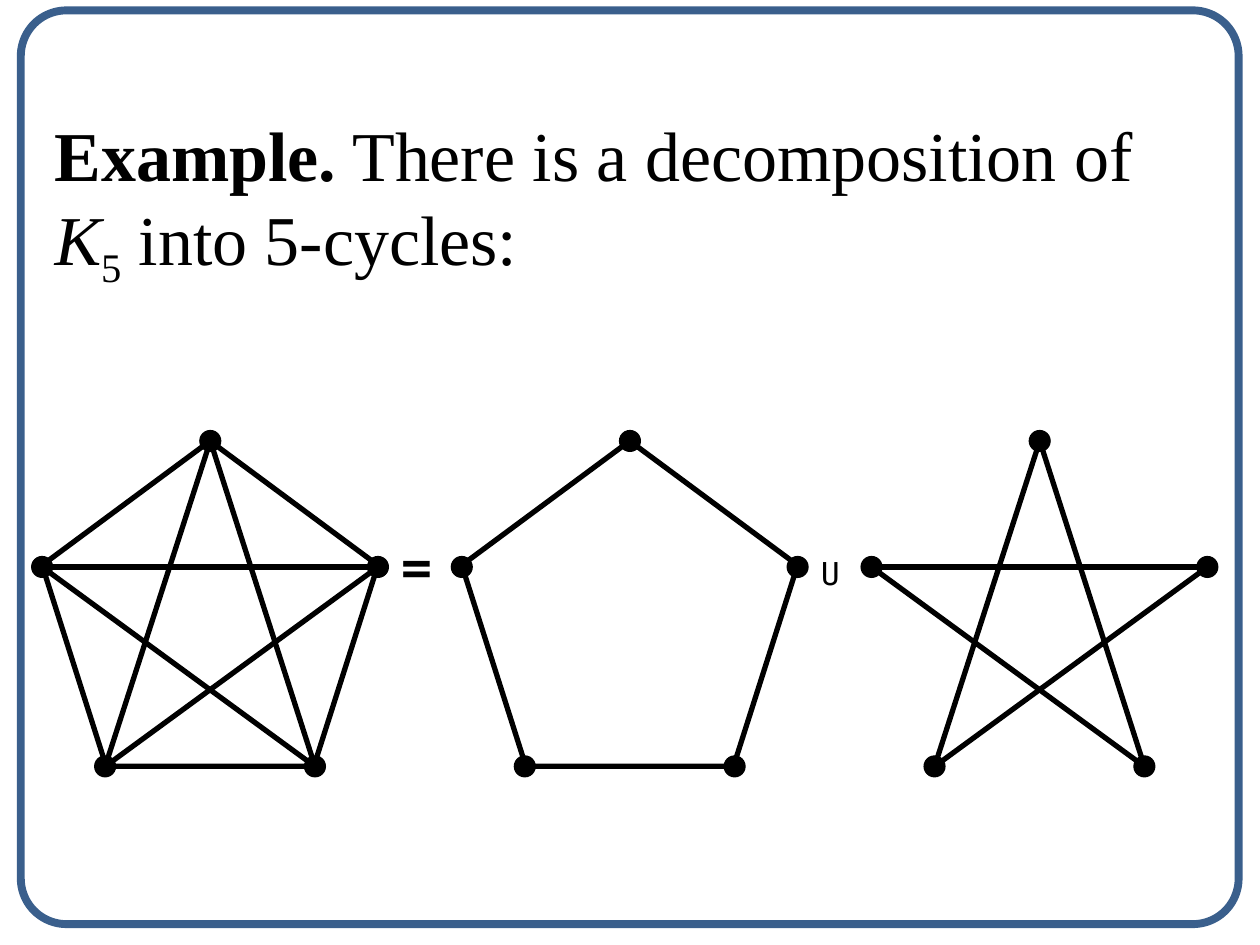
from dataclasses import dataclass

from lxml.etree import SubElement
from pptx import Presentation
from pptx.dml.color import RGBColor
from pptx.enum.shapes import MSO_CONNECTOR, MSO_SHAPE
from pptx.enum.text import MSO_AUTO_SIZE
from pptx.oxml.ns import qn
from pptx.util import Cm, Pt


@dataclass(frozen=True)
class Theme:
    ink: RGBColor = RGBColor(0x00, 0x00, 0x00)
    frame: RGBColor = RGBColor(0x3A, 0x5F, 0x8C)
    serif: str = "Times New Roman"
    sans: str = "Calibri"
    mono: str = "DejaVu Sans Mono"
    statement_size: int = 40
    equals_size: int = 36
    union_size: int = 18
    edge_width: float = 3
    node_line_width: float = 0.75
    frame_width: float = 4.5


THEME = Theme()

# Text, bold, italic, subscript
STATEMENT = [
    ("Example.", True, False, False),
    (" There is a decomposition of ", False, False, False),
    ("K", False, True, False),
    ("5", False, False, True),
    (" into 5-cycles:", False, False, False),
]
EQUALS = [("=", True, False, False)]
UNION = [("U", False, False, False)]

# Lengths in centimetres; vertices run clockwise from the top
GRAPH_TOP, GRAPH_WIDTH, GRAPH_HEIGHT = 8.89, 6.77, 6.56
VERTICES = [(3.39, 0), (6.77, 2.54), (5.5, 6.56), (1.27, 6.56), (0, 2.54)]
NODE_SIZE = 0.42

# Left edge, has outer cycle, has inner cycle
GRAPHS = [(0.85, True, True), (9.31, True, False), (17.57, False, True)]


def add_outline(slide, kind, box, color, width, filled=False):
    shape = slide.shapes.add_shape(kind, *(Cm(length) for length in box))
    shape.shadow.inherit = False
    if filled:
        shape.fill.solid()
        shape.fill.fore_color.rgb = color
    else:
        shape.fill.background()
    shape.line.color.rgb = color
    shape.line.width = Pt(width)
    return shape


def add_edge(slide, start, end):
    edge = slide.shapes.add_connector(
        MSO_CONNECTOR.STRAIGHT, *(Cm(length) for length in (*start, *end)))
    edge.line.color.rgb = THEME.ink
    edge.line.width = Pt(THEME.edge_width)
    SubElement(edge._element.spPr, qn("a:effectLst"))


def add_graph(slide, left, has_outer, has_inner):
    """Draw five nodes with the pentagon, the pentagram or both."""
    points = [(left + x, GRAPH_TOP + y) for x, y in VERTICES]
    if has_outer:
        add_outline(slide, MSO_SHAPE.REGULAR_PENTAGON,
                    (left, GRAPH_TOP, GRAPH_WIDTH, GRAPH_HEIGHT),
                    THEME.ink, THEME.edge_width)
    for x, y in points:
        box = (x - NODE_SIZE / 2, y - NODE_SIZE / 2, NODE_SIZE, NODE_SIZE)
        add_outline(slide, MSO_SHAPE.OVAL, box, THEME.ink,
                    THEME.node_line_width, filled=True)
    if has_inner:
        for index, start in enumerate(points):
            add_edge(slide, start, points[(index + 2) % len(points)])


def add_text(slide, box, runs, font_name, size):
    text_box = slide.shapes.add_textbox(*(Cm(length) for length in box))
    frame = text_box.text_frame
    frame.word_wrap = True
    frame.auto_size = MSO_AUTO_SIZE.SHAPE_TO_FIT_TEXT
    paragraph = frame.paragraphs[0]
    for text, bold, italic, subscript in runs:
        run = paragraph.add_run()
        run.text = text
        font = run.font
        font.name, font.size = font_name, Pt(size)
        font.bold, font.italic = bold, italic
        font.color.rgb = THEME.ink
        if subscript:
            run._r.get_or_add_rPr().set("baseline", "-25000")


def main():
    presentation = Presentation()
    presentation.slide_width, presentation.slide_height = Cm(25.4), Cm(19.05)
    slide = presentation.slides.add_slide(presentation.slide_layouts[6])

    add_text(slide, (0.85, 2.12, 23.92, 3.64), STATEMENT,
             THEME.serif, THEME.statement_size)
    for graph in GRAPHS:
        add_graph(slide, *graph)
    add_text(slide, (7.83, 10.48, 2.33, 1.78), EQUALS,
             THEME.sans, THEME.equals_size)
    add_text(slide, (16.3, 11.05, 2.75, 1.45), UNION,
             THEME.mono, THEME.union_size)

    border = add_outline(slide, MSO_SHAPE.ROUNDED_RECTANGLE,
                         (0.42, 0.21, 24.55, 18.42),
                         THEME.frame, THEME.frame_width)
    border.adjustments[0] = 0.05
    presentation.save("out.pptx")


if __name__ == "__main__":
    main()
